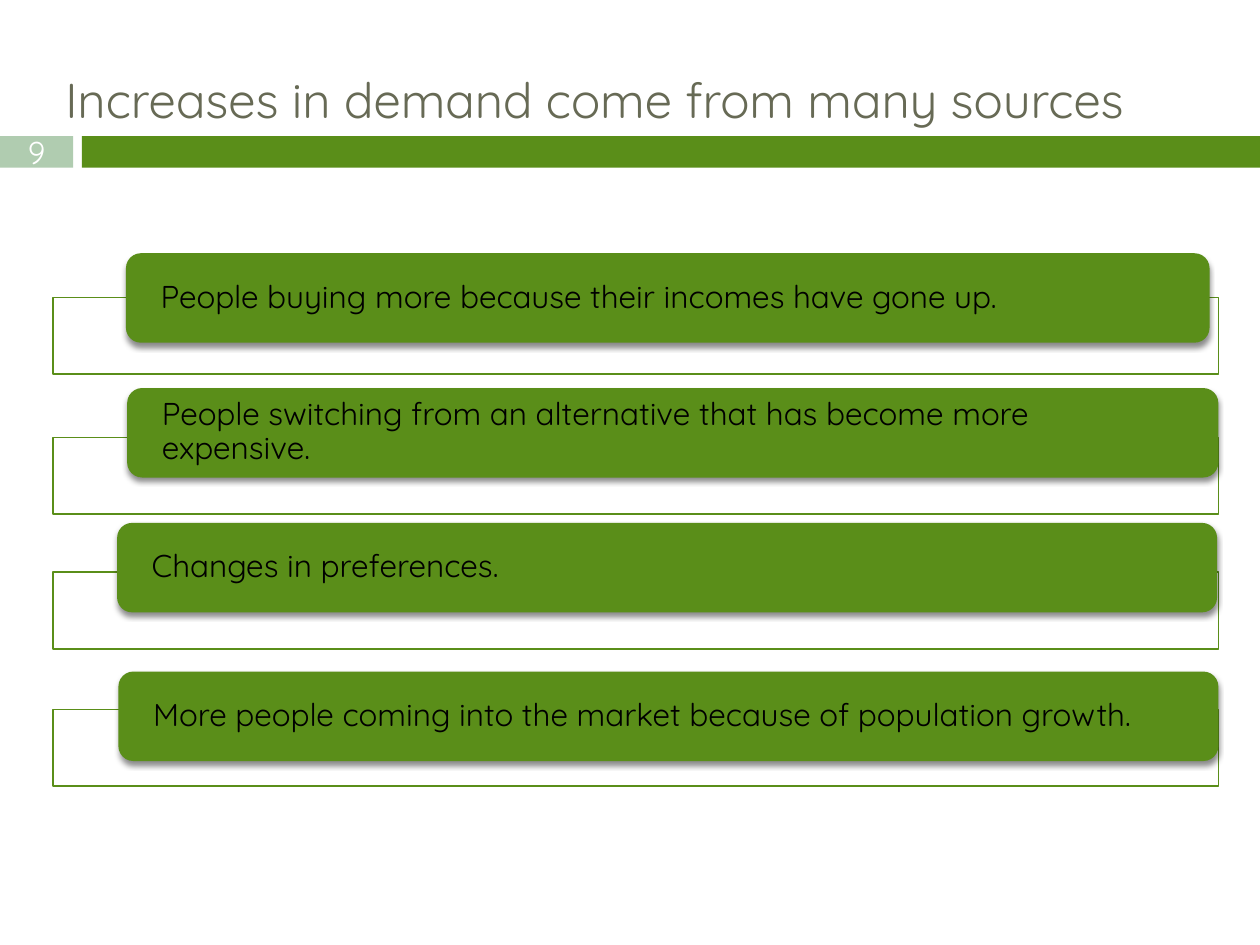
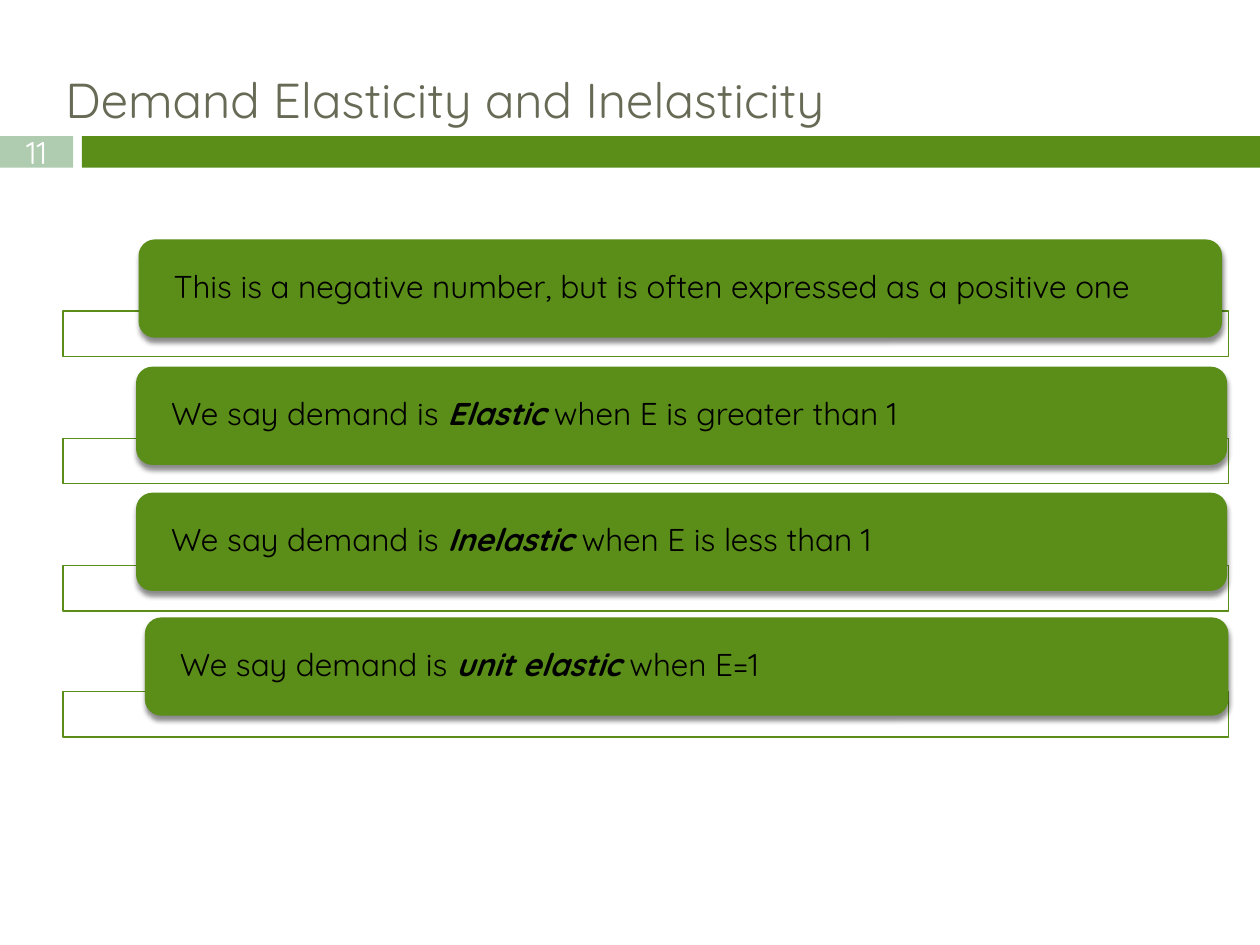
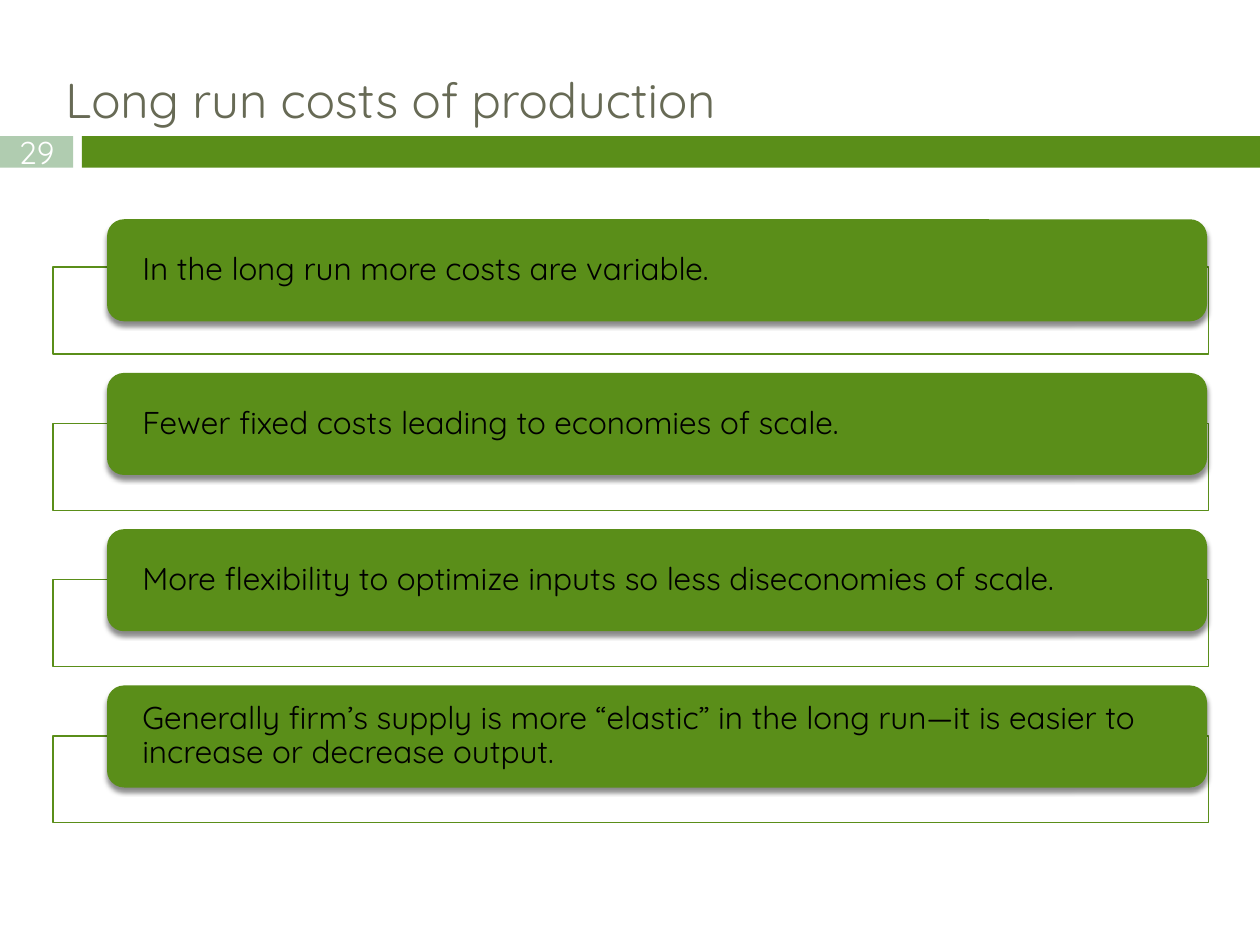
"""Build three economics slides of framed pill lists."""
import pptx
import pptx.dml.color
import pptx.enum.shapes
import pptx.enum.text
import pptx.oxml
import pptx.util

Inches, Pt = pptx.util.Inches, pptx.util.Pt
Shape = pptx.enum.shapes.MSO_SHAPE
Align = pptx.enum.text.PP_ALIGN
Anchor = pptx.enum.text.MSO_ANCHOR

FONT = "Quicksand"
COLORS = {"green": "5A8E19", "sage": "B0CCB0", "title": "676A55",
          "white": "FFFFFF", "black": "000000"}
NS = 'xmlns:a="http://schemas.openxmlformats.org/drawingml/2006/main"'
SHADOW = (f'<a:effectLst {NS}><a:outerShdw blurRad="38100" dist="30480" '
          'dir="5400000" algn="ctr" rotWithShape="0"><a:srgbClr val="000000">'
          '<a:alpha val="45000"/></a:srgbClr></a:outerShdw></a:effectLst>')

# Each row: frame top, pill left, pill top, pill width, text pieces
# (every second piece is emphasised).
SLIDES = [
    {"title": "Increases in demand come from many sources", "page": "9",
     "frame": (0.42, 9.25, 0.61), "pill": 0.71, "rows": [
         (2.36, 1, 2.01, 8.6,
          ["People buying more because their incomes have gone up."]),
         (3.47, 1.01, 3.08, 8.66,
          ["People switching from an alternative that has become more expensive."]),
         (4.54, 0.93, 4.15, 8.73, ["Changes in preferences."]),
         (5.63, 0.94, 5.33, 8.73,
          ["More people coming into the market because of population growth."])]},
    {"title": "Demand Elasticity and Inelasticity", "page": "11",
     "frame": (0.5, 9.25, 0.36), "pill": 0.78, "rows": [
         (2.47, 1.1, 1.9, 8.6,
          ["This is a negative number, but is often expressed as a positive one"]),
         (3.48, 1.08, 2.91, 8.66,
          ["We say demand is ", "Elastic ", "when E is greater than 1"]),
         (4.49, 1.08, 3.91, 8.66,
          ["We say demand is ", "Inelastic ", "when E is less than 1"]),
         (5.49, 1.15, 4.9, 8.6,
          ["We say demand is ", "unit elastic ", "when E=1"])]},
    {"title": "Long run costs of production", "page": "29",
     "frame": (0.42, 9.17, 0.69), "pill": 0.81, "rows": [
         (2.12, 0.85, 1.74, 8.73, ["In the long run more costs are variable."]),
         (3.36, 0.85, 2.96, 8.73,
          ["Fewer fixed costs leading to economies of scale."]),
         (4.6, 0.85, 4.2, 8.73,
          ["More flexibility to optimize inputs so less diseconomies of scale."]),
         (5.84, 0.85, 5.44, 8.73,
          ["Generally firm’s supply is more “elastic” in the long run—"
           "it is easier to increase or decrease output."])]},
]


def tint(name):
    return pptx.dml.color.RGBColor.from_string(COLORS[name])


def write(shape, parts, size=18, color="black", align=Align.LEFT,
          anchor=Anchor.MIDDLE, side=0, edge=0, space=1.0):
    frame = shape.text_frame
    frame.word_wrap = True
    frame.vertical_anchor = anchor
    frame.margin_left = frame.margin_right = Inches(side)
    frame.margin_top = frame.margin_bottom = Inches(edge)
    para = frame.paragraphs[0]
    para.alignment = align
    para.line_spacing = space
    for index, part in enumerate(parts):
        run = para.add_run()
        run.text = part
        font = run.font
        font.name, font.size = FONT, Pt(size)
        font.color.rgb = tint(color)
        font.bold = font.italic = index % 2 == 1


def draw(slide, kind, box, fill, line=None):
    shape = slide.shapes.add_shape(kind, *map(Inches, box))
    shape.shadow.inherit = False
    shape.fill.solid()
    shape.fill.fore_color.rgb = tint(fill)
    if line:
        shape.line.color.rgb = tint(line)
        shape.line.width = Pt(0.79)
    else:
        shape.line.fill.background()
    return shape


def shade(shape):
    props = shape.element.spPr
    props.replace(props.find("{*}effectLst"), pptx.oxml.parse_xml(SHADOW))


def fade(shape, share):
    color = shape.element.spPr.find("{*}solidFill")[0]
    color.append(pptx.oxml.parse_xml(f'<a:alpha {NS} val="{share * 1000}"/>'))


def head(slide, title, page):
    draw(slide, Shape.RECTANGLE, (0.65, 1.08, 9.35, 0.25), "green")
    badge = draw(slide, Shape.RECTANGLE, (0, 1.08, 0.58, 0.25), "sage")
    write(badge, [page], color="white", align=Align.CENTER)
    box = slide.shapes.add_textbox(*map(Inches, (0.42, 0.5, 9.33, 0.56)))
    write(box, [title], size=28, color="title", anchor=Anchor.TOP,
          side=0.1, edge=0.05)


def main():
    deck = pptx.Presentation()
    deck.slide_width, deck.slide_height = Inches(10), Inches(7.5)
    for data in SLIDES:
        slide = deck.slides.add_slide(deck.slide_layouts[6])
        head(slide, data["title"], data["page"])
        left, width, high = data["frame"]
        for top, start, above, wide, parts in data["rows"]:
            frame = draw(slide, Shape.RECTANGLE, (left, top, width, high),
                         "white", line="green")
            fade(frame, 90)
            pill = draw(slide, Shape.ROUNDED_RECTANGLE,
                        (start, above, wide, data["pill"]), "green")
            shade(pill)
            write(pill, parts, side=0.24, space=0.9)
    deck.save("out.pptx")


if __name__ == "__main__":
    main()
